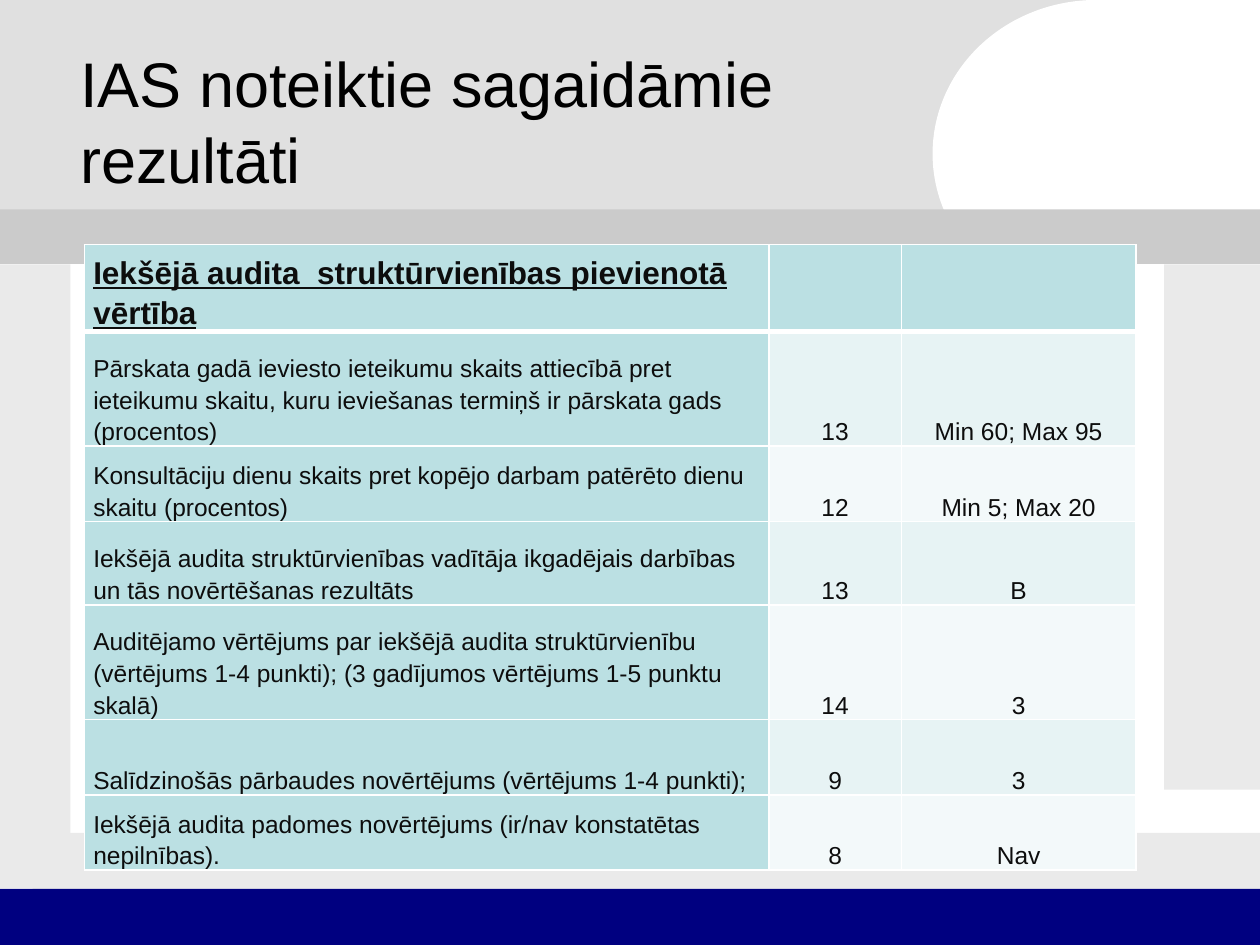
"""Build a slide with a table of expected internal audit results."""
from lxml import etree
from pptx import Presentation
from pptx.dml.color import RGBColor
from pptx.enum.shapes import MSO_SHAPE
from pptx.enum.text import MSO_ANCHOR, PP_ALIGN
from pptx.oxml.ns import qn
from pptx.util import Cm, Pt

RECT, OVAL = MSO_SHAPE.RECTANGLE, MSO_SHAPE.OVAL
LEFT, MID = PP_ALIGN.LEFT, PP_ALIGN.CENTER
BASE, HALF = MSO_ANCHOR.BOTTOM, MSO_ANCHOR.MIDDLE

HUES = {
    "top": "E0E0E0", "white": "FFFFFF", "side": "EAEAEA", "foot": "000080",
    "bar": "CBCBCB", "head": "BBE0E3", "odd": "E7F3F4", "even": "F3F9FA",
    "ink": "0D0D0D", "black": "000000",
}
DECOR = [
    (RECT, "top", 0, 0, 23.09, 4.29),
    (OVAL, "white", 18.8, 0, 6.6, 6.2),
    (RECT, "side", 0, 5.33, 1.42, 12.58),
    (RECT, "side", 0.66, 16.79, 24.74, 1.13),
    (RECT, "foot", 0, 17.92, 25.4, 1.13),
    (RECT, "side", 23.47, 5.33, 1.93, 10.59),
    (RECT, "white", 21.9, 0, 3.5, 5.13),
    (RECT, "bar", 0, 4.22, 25.4, 1.1),
]
TITLE = "IAS noteiktie sagaidāmie rezultāti"
ROWS = [
    (1.52, "Iekšējā audita  struktūrvienības pievienotā vērtība", "", ""),
    (2.31, "Pārskata gadā ieviesto ieteikumu skaits attiecībā pret ieteikumu skaitu, "
     "kuru ieviešanas termiņš ir pārskata gads (procentos)", "13", "Min 60; Max 95"),
    (1.52, "Konsultāciju dienu skaits pret kopējo darbam patērēto dienu skaitu "
     "(procentos)", "12", "Min 5; Max 20"),
    (1.68, "Iekšējā audita struktūrvienības vadītāja ikgadējais darbības un tās "
     "novērtēšanas rezultāts", "13", "B"),
    (2.31, "Auditējamo vērtējums par iekšējā audita struktūrvienību (vērtējums 1-4 "
     "punkti); (3 gadījumos vērtējums 1-5 punktu skalā)", "14", "3"),
    (1.52, "Salīdzinošās pārbaudes novērtējums (vērtējums 1-4 punkti);", "9", "3"),
    (1.52, "Iekšējā audita padomes novērtējums (ir/nav konstatētas nepilnības).",
     "8", "Nav"),
]
COLS = [13.8, 2.67, 4.73]


def hue(name):
    return RGBColor.from_string(HUES[name])


def write(frame, text, size=14, color="ink", bold=False, line=False, align=LEFT, gap=None):
    para = frame.paragraphs[0]
    para.alignment = align
    para.line_spacing = gap
    run = para.add_run()
    run.text = text
    font = run.font
    font.name, font.size, font.bold, font.underline = "Arial", Pt(size), bold, line
    font.color.rgb = hue(color)


def edge(cell, low):
    props = cell._tc.get_or_add_tcPr()
    for spot, (side, wide) in enumerate([("lnL", 1), ("lnR", 1), ("lnT", 1), ("lnB", low)]):
        rule = etree.Element(qn(f"a:{side}"), w=str(Pt(wide)))
        fill = etree.SubElement(rule, qn("a:solidFill"))
        etree.SubElement(fill, qn("a:srgbClr"), val=HUES["white"])
        props.insert(spot, rule)


def decor(slide):
    for kind, color, *box in DECOR:
        shape = slide.shapes.add_shape(kind, *map(Cm, box))
        shape.shadow.inherit = False
        shape.fill.solid()
        shape.fill.fore_color.rgb = hue(color)
        shape.line.fill.background()


def title(slide):
    frame = slide.shapes.add_textbox(Cm(1.37), Cm(0.84), Cm(18.8), Cm(3.18)).text_frame
    frame.word_wrap = True
    frame.vertical_anchor = HALF
    write(frame, TITLE, size=36, color="black")


def grid(slide):
    high = sum(row[0] for row in ROWS)
    table = slide.shapes.add_table(len(ROWS), len(COLS), Cm(1.7), Cm(4.93),
                                   Cm(sum(COLS)), Cm(high)).table
    for col, wide in zip(table.columns, COLS):
        col.width = Cm(wide)
    for r, (tall, *texts) in enumerate(ROWS):
        table.rows[r].height = Cm(tall)
        top = r == 0
        for c, text in enumerate(texts):
            cell = table.cell(r, c)
            cell.vertical_anchor = BASE
            cell.margin_left = cell.margin_right = Cm(0.18)
            cell.margin_top = cell.margin_bottom = 0
            cell.fill.solid()
            shade = "head" if top or c == 0 else "odd" if r % 2 else "even"
            cell.fill.fore_color.rgb = hue(shade)
            edge(cell, 3 if top else 1)
            if text:
                write(cell.text_frame, text, size=18 if top else 14, bold=top, line=top,
                      align=MID if c else LEFT, gap=1.15)


def main():
    deck = Presentation()
    deck.slide_width, deck.slide_height = Cm(25.4), Cm(19.05)
    slide = deck.slides.add_slide(deck.slide_layouts[6])
    decor(slide)
    title(slide)
    grid(slide)
    deck.save("out.pptx")


if __name__ == "__main__":
    main()
